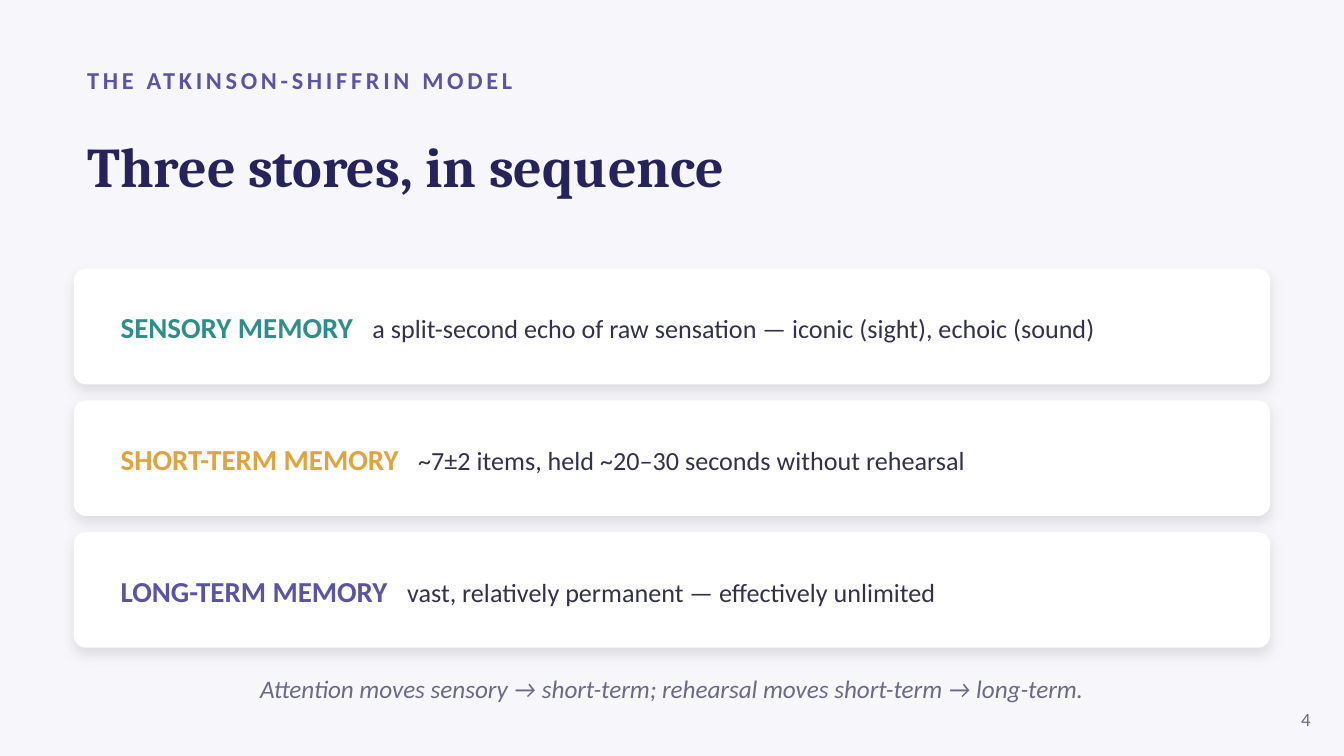
from dataclasses import dataclass
from typing import Any, NamedTuple

from lxml import etree
from pptx import Presentation
from pptx import util as u
from pptx.dml.color import RGBColor
from pptx.enum import shapes, text
from pptx.oxml.ns import qn

SLIDE_WIDTH = u.Inches(10)
SLIDE_HEIGHT = SLIDE_WIDTH * 9 // 16
COLUMN = u.Inches(0.05)
ROW = u.Inches(0.02)


@dataclass(frozen=True)
class Theme:
    paper: str = "F7F7FB"
    card: str = "FFFFFF"
    shadow: str = "000000"
    navy: str = "26235C"
    violet: str = "5B53A6"
    teal: str = "2F8F86"
    amber: str = "E0A33E"
    ink: str = "33324A"
    muted: str = "6B6A86"
    body_face: str = "Calibri"
    title_face: str = "Cambria"
    eyebrow_size: float = 13
    title_size: float = 30
    store_size: float = 15.5
    detail_size: float = 14
    caption_size: float = 13.5
    number_size: float = 10


THEME = Theme()


class Area(NamedTuple):
    column: float
    row: float
    columns: float
    rows: float

    def format(self) -> dict[str, int]:
        return {
            "left": int(self.column * COLUMN),
            "top": int(self.row * ROW),
            "width": int(self.columns * COLUMN),
            "height": int(self.rows * ROW),
        }


class Span(NamedTuple):
    words: str
    size: float
    color: str
    bold: bool = False
    italic: bool = False
    face: str = THEME.body_face
    tracking: float = 0


class Store(NamedTuple):
    label: str
    color: str
    detail: str


MARGIN, CONTENT = 11, 178
CARD_ROW, CARD_ROWS, CARD_PITCH, CARD_RADIUS = 100, 43, 49, 4.5
STORES = [
    Store("SENSORY MEMORY", THEME.teal,
          "a split-second echo of raw sensation — iconic (sight), echoic (sound)"),
    Store("SHORT-TERM MEMORY", THEME.amber,
          "~7±2 items, held ~20–30 seconds without rehearsal"),
    Store("LONG-TERM MEMORY", THEME.violet,
          "vast, relatively permanent — effectively unlimited"),
]


def apply(target: Any, values: dict[str, Any]) -> None:
    for name, value in values.items():
        setattr(target, name, value)


def write(holder: Any, spans: list[Span], align: text.PP_ALIGN) -> None:
    frame = holder.text_frame
    apply(frame, {
        "word_wrap": True,
        "auto_size": text.MSO_AUTO_SIZE.NONE,
        "vertical_anchor": text.MSO_ANCHOR.MIDDLE,
    })
    paragraph = frame.paragraphs[0]
    paragraph.alignment = align
    for span in spans:
        run = paragraph.add_run()
        run.text = span.words
        apply(run.font, {
            "name": span.face,
            "size": u.Pt(span.size),
            "bold": span.bold,
            "italic": span.italic,
        })
        run.font.color.rgb = RGBColor.from_string(span.color)
        if span.tracking:
            run.font._element.set("spc", str(int(span.tracking * 100)))


def add_text(slide: Any, area: Area, spans: list[Span],
             align: text.PP_ALIGN = text.PP_ALIGN.LEFT) -> None:
    write(slide.shapes.add_textbox(**area.format()), spans, align)


def add_card(slide: Any, area: Area) -> None:
    card = slide.shapes.add_shape(
        shapes.MSO_SHAPE.ROUNDED_RECTANGLE, **area.format())
    card.adjustments[0] = CARD_RADIUS / area.rows
    card.fill.solid()
    card.fill.fore_color.rgb = RGBColor.from_string(THEME.card)
    card.line.fill.background()
    card.shadow.inherit = False
    effects = card._element.spPr.find(qn("a:effectLst"))
    shadow = etree.SubElement(
        effects, qn("a:outerShdw"), blurRad=str(u.Pt(7)), dist=str(u.Pt(3)),
        dir=str(90 * 60000), algn="bl", rotWithShape="0")
    tint = etree.SubElement(shadow, qn("a:srgbClr"), val=THEME.shadow)
    etree.SubElement(tint, qn("a:alpha"), val="10000")


def add_store(slide: Any, store: Store, row: float) -> None:
    add_card(slide, Area(MARGIN, row, CONTENT, CARD_ROWS))
    add_text(slide, Area(MARGIN + 5, row + 8, CONTENT - 10, 27.5), [
        Span(store.label, THEME.store_size, store.color, bold=True),
        Span(" ", THEME.store_size, store.color, bold=True, tracking=7),
        Span(store.detail, THEME.detail_size, THEME.ink),
    ])


def main() -> None:
    deck = Presentation()
    apply(deck, {"slide_width": SLIDE_WIDTH, "slide_height": SLIDE_HEIGHT})
    slide = deck.slides.add_slide(deck.slide_layouts[5])
    slide.background.fill.solid()
    slide.background.fill.fore_color.rgb = RGBColor.from_string(THEME.paper)

    title = slide.shapes.title
    apply(title, Area(MARGIN, 39, CONTENT, 45).format())
    write(title, [Span("Three stores, in sequence", THEME.title_size, THEME.navy,
                       bold=True, face=THEME.title_face)], text.PP_ALIGN.LEFT)
    add_text(slide, Area(MARGIN, 21, 180, 17.5), [
        Span("THE ATKINSON-SHIFFRIN MODEL", THEME.eyebrow_size, THEME.violet,
             bold=True, tracking=2)])

    for index, store in enumerate(STORES):
        add_store(slide, store, CARD_ROW + index * CARD_PITCH)

    add_text(slide, Area(MARGIN, 247.5, CONTENT, 17.5), [
        Span("Attention moves sensory → short-term; "
             "rehearsal moves short-term → long-term.",
             THEME.caption_size, THEME.muted, italic=True)],
        text.PP_ALIGN.CENTER)
    add_text(slide, Area(187, 260, 10, 15),
             [Span("4", THEME.number_size, THEME.muted)], text.PP_ALIGN.RIGHT)
    deck.save("out.pptx")


if __name__ == "__main__":
    main()
